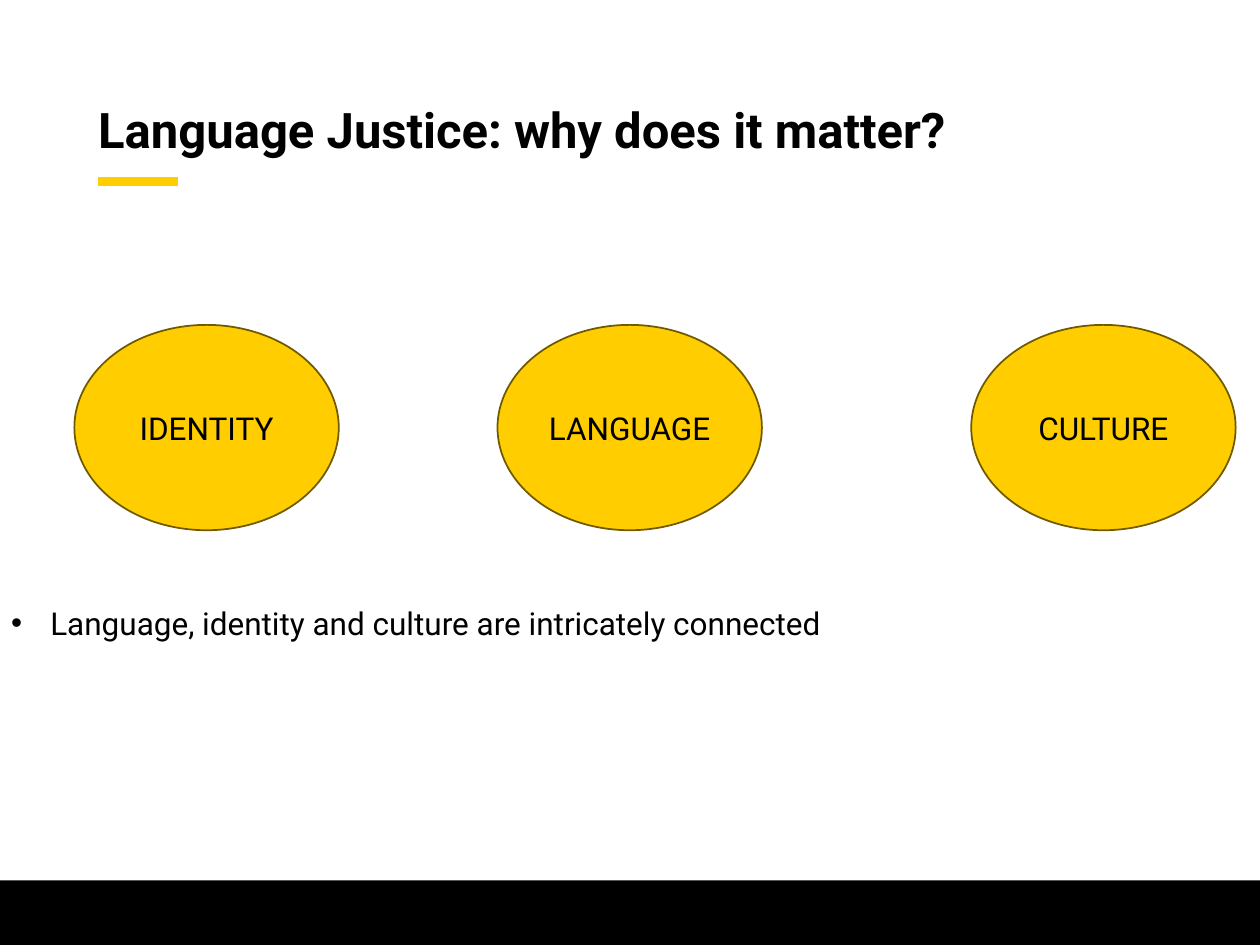
"""Builds the slide on why language justice matters."""
from dataclasses import dataclass

from lxml import etree
from pptx import Presentation
from pptx.dml.color import RGBColor
from pptx.enum.shapes import MSO_CONNECTOR, MSO_SHAPE
from pptx.enum.text import MSO_ANCHOR, MSO_AUTO_SIZE, PP_ALIGN
from pptx.oxml.ns import qn
from pptx.util import Cm, Pt

STRAIGHT = MSO_CONNECTOR.STRAIGHT
OVAL, RECTANGLE = MSO_SHAPE.OVAL, MSO_SHAPE.RECTANGLE
LEFT, CENTER = PP_ALIGN.LEFT, PP_ALIGN.CENTER
MIDDLE, TOP = MSO_ANCHOR.MIDDLE, MSO_ANCHOR.TOP
FIXED = MSO_AUTO_SIZE.NONE

FONT = "Roboto"
YELLOW, BROWN, BLACK, WHITE = "FFCD00", "705A00", "000000", "FFFFFF"
SLIDE_WIDTH, SLIDE_HEIGHT = 25.4, 19.05
MARGIN = 1.98


@dataclass(frozen=True)
class Concept:
    label: str
    left: float


CONCEPTS = (
    Concept("IDENTITY", 1.5),
    Concept("LANGUAGE", 10.03),
    Concept("CULTURE", 19.58),
)


def color(value: str) -> RGBColor:
    return RGBColor.from_string(value)


def place(shape, left: float, top: float, width: float, height: float) -> None:
    shape.left, shape.top = Cm(left), Cm(top)
    shape.width, shape.height = Cm(width), Cm(height)


def write(shape, text: str, *, size: float = 18, bold: bool = False,
          align=LEFT, anchor=MIDDLE, spacing: float = 1.0,
          inset: float | None = None, hanging: float = 0) -> None:
    frame = shape.text_frame
    frame.auto_size = FIXED
    frame.word_wrap = True
    frame.vertical_anchor = anchor
    if inset is not None:
        frame.margin_left = frame.margin_right = Cm(inset)
        frame.margin_top = frame.margin_bottom = Cm(inset)
    paragraph = frame.paragraphs[0]
    paragraph.alignment = align
    paragraph.line_spacing = spacing
    paragraph.space_before = Pt(0)
    if hanging:
        properties = paragraph._p.get_or_add_pPr()
        properties.set("marL", str(Cm(hanging)))
        properties.set("indent", str(-Cm(hanging)))
        etree.SubElement(properties, qn("a:buFont"), typeface="Arial")
        etree.SubElement(properties, qn("a:buChar"), char="•")
    run = paragraph.add_run()
    run.text = text
    run.font.name = FONT
    run.font.size = Pt(size)
    run.font.bold = bold
    run.font.color.rgb = color(BLACK)


def draw_accent(slide) -> None:
    accent = slide.shapes.add_connector(
        STRAIGHT, Cm(MARGIN), Cm(3.66), Cm(3.58), Cm(3.66))
    accent.line.color.rgb = color(YELLOW)
    accent.line.width = Pt(5)
    etree.SubElement(accent._element.spPr, qn("a:effectLst"))


def draw_footer(slide) -> None:
    top = 17.75
    footer = slide.shapes.add_shape(
        RECTANGLE, 0, Cm(top), Cm(SLIDE_WIDTH), Cm(SLIDE_HEIGHT - top))
    footer.shadow.inherit = False
    footer.fill.solid()
    footer.fill.fore_color.rgb = color(BLACK)
    footer.line.fill.background()


def draw_concept(slide, concept: Concept) -> None:
    oval = slide.shapes.add_shape(
        OVAL, Cm(concept.left), Cm(6.55), Cm(5.33), Cm(4.14))
    oval.shadow.inherit = False
    oval.fill.solid()
    oval.fill.fore_color.rgb = color(YELLOW)
    oval.line.color.rgb = color(BROWN)
    oval.line.width = Pt(1)
    write(oval, concept.label, align=CENTER)


def main() -> None:
    deck = Presentation()
    deck.slide_width, deck.slide_height = Cm(SLIDE_WIDTH), Cm(SLIDE_HEIGHT)
    slide = deck.slides.add_slide(deck.slide_layouts[1])
    slide.background.fill.solid()
    slide.background.fill.fore_color.rgb = color(WHITE)

    draw_accent(slide)
    draw_footer(slide)
    title, message = slide.placeholders
    place(title, MARGIN, 1.47, 21.44, 2.41)
    write(title, "Language Justice: why does it matter?",
          size=28, bold=True, spacing=0.9, inset=0)
    for concept in CONCEPTS:
        draw_concept(slide, concept)
    place(message, -0.03, 12.04, 17, 1.02)
    write(message, "Language, identity and culture are intricately connected",
          anchor=TOP, hanging=0.79)

    deck.save("out.pptx")


if __name__ == "__main__":
    main()
